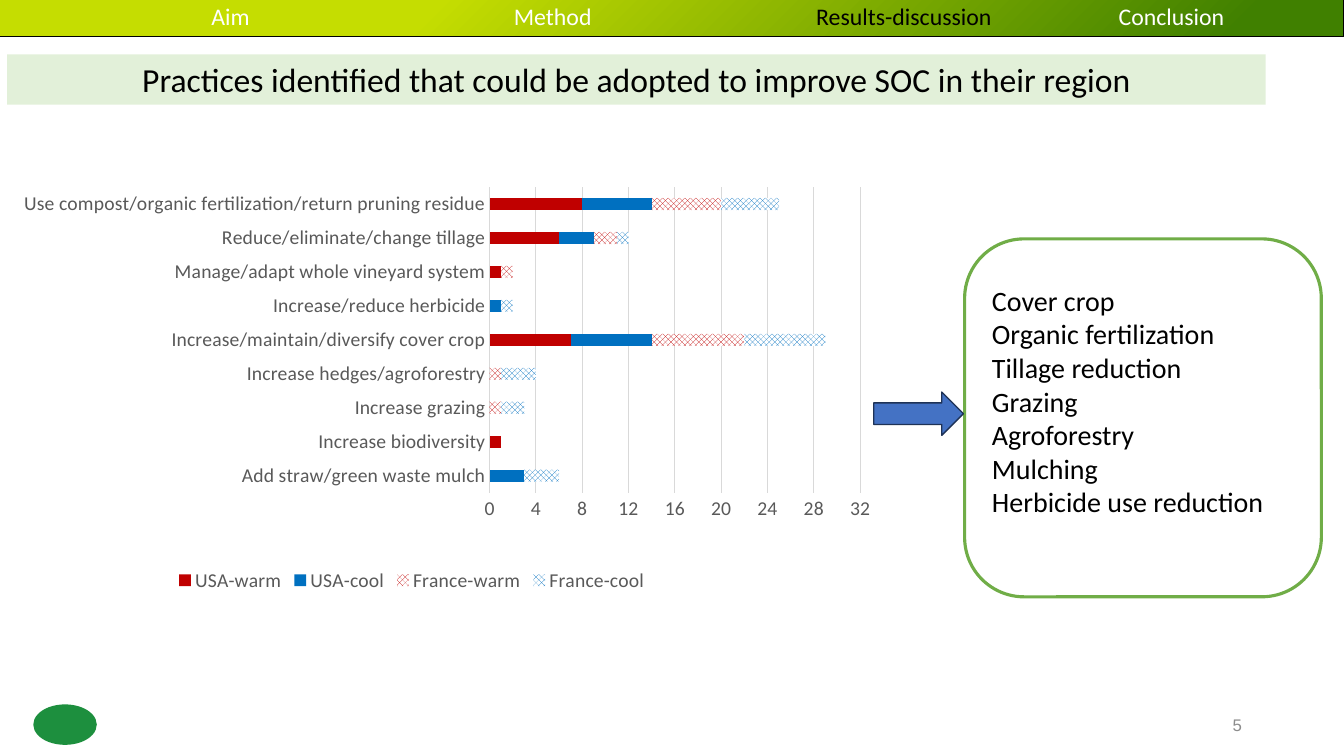
from pptx import Presentation, util as u
from pptx.chart.data import CategoryChartData
from pptx.dml.color import RGBColor
from pptx.enum import chart as ch, dml, shapes, text
from pptx.oxml import parse_xml
from pptx.oxml.ns import nsdecls

GRAD = (
    '<a:gradFill %s rotWithShape="1"><a:gsLst>'
    '<a:gs pos="8000"><a:srgbClr val="408000"/></a:gs>'
    '<a:gs pos="68000"><a:srgbClr val="C5DD01"/></a:gs></a:gsLst>'
    '<a:path path="circle"><a:fillToRect l="100000" t="100000"/></a:path>'
    '</a:gradFill>' % nsdecls("a"))
LAYOUT = (
    '<c:layout %s><c:manualLayout><c:layoutTarget val="inner"/>'
    '<c:xMode val="edge"/><c:yMode val="edge"/>'
    '<c:x val="0.582"/><c:y val="0.064"/><c:w val="0.39"/><c:h val="0.699"/>'
    '</c:manualLayout></c:layout>' % nsdecls("c"))
STEPS = ["Aim", "Method", "Results-discussion", "Conclusion"]
CROPS = ["Cover crop", "Organic fertilization", "Tillage reduction", "Grazing",
         "Agroforestry", "Mulching", "Herbicide use reduction"]
CATS = ["Add straw/green waste mulch", "Increase biodiversity", "Increase grazing",
        "Increase hedges/agroforestry", "Increase/maintain/diversify cover crop",
        "Increase/reduce herbicide", "Manage/adapt whole vineyard system",
        "Reduce/eliminate/change tillage",
        "Use compost/organic fertilization/return pruning residue"]
SERIES = [
    ("USA-warm", [None, 1, None, None, 7, None, 1, 6, 8], "C00000", False),
    ("USA-cool", [3, None, None, None, 7, 1, None, 3, 6], "0070C0", False),
    ("France-warm", [None, None, 1, 1, 8, None, 1, 2, 6], "C00000", True),
    ("France-cool", [3, None, 2, 3, 7, 1, None, 1, 5], "0070C0", True),
]


def color(item, tone):
    item.rgb = RGBColor.from_string(tone)


def style(font, size, tone, name="Calibri"):
    font.size, font.name = u.Pt(size), name
    color(font.color, tone)


def place(box):
    return [u.Cm(v) for v in box]


def draw(slide, kind, box, fill=None, line=None, width=1):
    shape = slide.shapes.add_shape(kind, *place(box))
    shape.shadow.inherit = False
    if fill:
        shape.fill.solid()
        color(shape.fill.fore_color, fill)
    else:
        shape.fill.background()
    if line:
        color(shape.line.color, line)
        shape.line.width = u.Pt(width)
    else:
        shape.line.fill.background()
    return shape


def write(shape, lines, size, tone, align, name="Calibri"):
    frame = shape.text_frame
    frame.word_wrap = True
    frame.vertical_anchor = text.MSO_ANCHOR.MIDDLE
    frame.text = "\n".join(lines)
    for para in frame.paragraphs:
        para.alignment = align
        style(para.font, size, tone, name)
    return frame


def header(slide, box):
    bar = draw(slide, shapes.MSO_SHAPE.RECTANGLE, box, None, "000000", 0.75)
    props = bar._element.spPr
    old = props.find("{*}noFill")
    props.replace(old, parse_xml(GRAD))
    frame = write(bar, [""], 17, "FFFFFF", text.PP_ALIGN.LEFT)
    para = frame.paragraphs[0]
    stops = "".join('<a:tab pos="%d" algn="l"/>' % u.Cm(5.08 + 7.62 * i)
                    for i in range(len(STEPS)))
    para._p.get_or_add_pPr().insert(
        0, parse_xml("<a:tabLst %s>%s</a:tabLst>" % (nsdecls("a"), stops)))
    for step in STEPS:
        run = para.add_run()
        run.text = "\t" + step
        if step == "Results-discussion":
            color(run.font.color, "000000")


def title(slide, box):
    band = draw(slide, shapes.MSO_SHAPE.RECTANGLE, box, "E2F0D9")
    write(band, ["Practices identified that could be adopted to improve SOC in their region"],
          24, "000000", text.PP_ALIGN.CENTER)


def crops(slide, box):
    left, top, wide, high = box
    card = draw(slide, shapes.MSO_SHAPE.ROUNDED_RECTANGLE, box, None, "70AD47", 2.25)
    frame = write(card, CROPS, 20, "000000", text.PP_ALIGN.LEFT)
    frame.margin_bottom = u.Cm(0.98)
    draw(slide, shapes.MSO_SHAPE.RIGHT_ARROW,
         (left - 2.29, top + high / 2 - 0.65, 2.26, 1.09), "4472C4", "1E3256")


def bars(slide, box):
    data = CategoryChartData()
    data.categories = CATS
    for name, vals, *_ in SERIES:
        data.add_series(name, vals)
    chart = slide.shapes.add_chart(
        ch.XL_CHART_TYPE.BAR_STACKED, *place(box), data).chart
    style(chart.font, 14, "595959")
    chart.has_title = False
    chart.has_legend = True
    chart.legend.position = ch.XL_LEGEND_POSITION.BOTTOM
    chart.legend.include_in_layout = False
    style(chart.legend.font, 14, "595959")
    cat, val = chart.category_axis, chart.value_axis
    for axis in (cat, val):
        axis.major_tick_mark = axis.minor_tick_mark = ch.XL_TICK_MARK.NONE
        style(axis.tick_labels.font, 14, "595959")
    val.minimum_scale, val.maximum_scale, val.major_unit = 0, 32, 4
    val.format.line.fill.background()
    for line in (cat.format.line, val.major_gridlines.format.line):
        color(line.color, "D9D9D9")
        line.width = u.Pt(0.75)
    plot = chart.plots[0]
    plot.gap_width, plot.overlap, plot.vary_by_categories = 182, 100, False
    for series, (_, _, tone, check) in zip(plot.series, SERIES):
        fill = series.format.fill
        if check:
            fill.patterned()
            fill.pattern = dml.MSO_PATTERN.LARGE_CHECKER_BOARD
            color(fill.back_color, "FFFFFF")
        else:
            fill.solid()
        color(fill.fore_color, tone)
    area = chart._chartSpace.chart.plotArea
    old = area.find("{*}layout")
    if old is not None:
        area.remove(old)
    area.insert(0, parse_xml(LAYOUT))


def footer(slide, box):
    left, top, wide, high = box
    draw(slide, shapes.MSO_SHAPE.OVAL, (left, top, 1.6, high), "1D8F3E")
    page = slide.shapes.add_textbox(*place((left + wide - 7.62, top, 7.62, high)))
    write(page, ["5"], 12, "8C8C8C", text.PP_ALIGN.RIGHT, "Arial")


def main():
    deck = Presentation()
    deck.slide_width, deck.slide_height = u.Cm(33.87), u.Cm(19.05)
    slide = deck.slides.add_slide(deck.slide_layouts[6])
    footer(slide, (0.84, 17.75, 30.71, 1.02))
    header(slide, (0, -0.08, 33.87, 0.99))
    title(slide, (0.18, 1.37, 31.72, 1.27))
    crops(slide, (24.31, 6.02, 8.99, 9.02))
    bars(slide, (-1.6, 4.01, 23.95, 11.02))
    deck.save("out.pptx")


if __name__ == "__main__":
    main()
